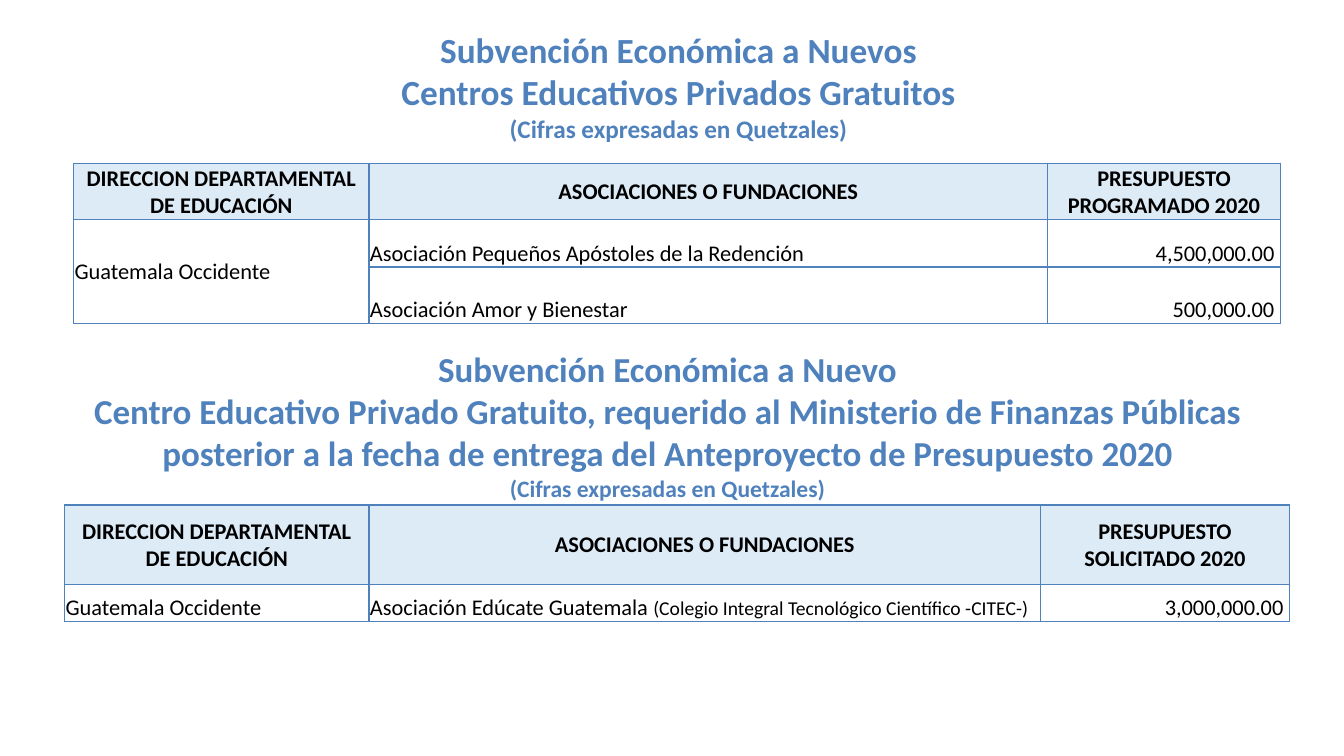
from lxml import etree
from pptx import Presentation
from pptx.dml.color import RGBColor
from pptx.enum.text import MSO_ANCHOR, PP_ALIGN
from pptx.oxml.ns import qn
from pptx.util import Inches, Pt

BLUE = RGBColor(0x4F, 0x81, 0xBD)
PALE_BLUE = RGBColor(0xDD, 0xEB, 0xF7)
BLACK = RGBColor(0, 0, 0)
LEFT, CENTER, RIGHT = PP_ALIGN.LEFT, PP_ALIGN.CENTER, PP_ALIGN.RIGHT
TOP, MIDDLE, BOTTOM = MSO_ANCHOR.TOP, MSO_ANCHOR.MIDDLE, MSO_ANCHOR.BOTTOM

DEPARTMENT_HEADER = "DIRECCION DEPARTAMENTAL\nDE EDUCACIÓN"
ASSOCIATION_HEADER = "ASOCIACIONES O FUNDACIONES"
DEPARTMENT = "Guatemala Occidente"
UNITS = "(Cifras expresadas en Quetzales)"


def write(frame, text, size=16, color=BLACK, bold=False, align=LEFT, font="Calibri"):
    """Fill the frame; text is a string or a list of (text, size) runs, with \\n between lines."""
    paragraph = frame.paragraphs[0]
    paragraph.alignment = align
    for part, part_size in [(text, size)] if isinstance(text, str) else text:
        for index, line in enumerate(part.split("\n")):
            if index:
                paragraph = frame.add_paragraph()
                paragraph.alignment = align
            if line:
                run = paragraph.add_run()
                run.text = line
                run.font.size, run.font.bold, run.font.name = Pt(part_size), bold, font
                run.font.color.rgb = color


class BudgetSlide:
    def __init__(self, slide):
        self.slide = slide

    def heading(self, left, top, width, height, text, inset_top=0):
        box = self.slide.shapes.add_textbox(*map(Inches, (left, top, width, height)))
        frame = box.text_frame
        frame.word_wrap = True
        frame.vertical_anchor = TOP
        frame.margin_top, frame.margin_bottom = Inches(inset_top), 0
        write(frame, text, color=BLUE, bold=True, align=CENTER)

    def border(self, cell, side, points):
        line = etree.SubElement(cell._tc.get_or_add_tcPr(), qn("a:" + side), w=str(Pt(points)))
        fill = etree.SubElement(line, qn("a:solidFill"))
        etree.SubElement(fill, qn("a:srgbClr"), val=str(BLUE))

    def cell(self, cell, text, header, align, anchor, right=0.01):
        cell.margin_left = cell.margin_top = Inches(0.01)
        cell.margin_right, cell.margin_bottom = Inches(right), 0
        cell.vertical_anchor = anchor
        for side in ("lnL", "lnR", "lnT", "lnB"):
            self.border(cell, side, 1)
        if header:
            cell.fill.solid()
            cell.fill.fore_color.rgb = PALE_BLUE
        else:
            cell.fill.background()
        write(cell.text_frame, text, bold=header, align=align)

    def table(self, left, top, widths, heights, rows):
        """Add a budget table; consecutive rows of one department share its cell."""
        frame = self.slide.shapes.add_table(
            len(rows), len(widths), Inches(left), Inches(top),
            Inches(sum(widths)), Inches(sum(heights)))
        table = frame.table
        table.first_row = table.horz_banding = False
        for column, width in zip(table.columns, widths):
            column.width = Inches(width)
        for row, height in zip(table.rows, heights):
            row.height = Inches(height)
        shared = len(rows) > 2
        if shared:
            table.cell(1, 0).merge(table.cell(len(rows) - 1, 0))
        for r, values in enumerate(rows):
            for c, value in enumerate(values):
                header, amount = r == 0, r > 0 and c == 2
                align = CENTER if header else RIGHT if amount else LEFT
                anchor = MIDDLE if header or (shared and c == 0) else BOTTOM
                self.cell(table.cell(r, c), value, header, align, anchor,
                          right=0.06 if amount else 0.01)


def main():
    deck = Presentation()
    deck.slide_width, deck.slide_height = Inches(13.33), Inches(7.5)
    budget = BudgetSlide(deck.slides.add_slide(deck.slide_layouts[6]))

    budget.heading(1.89, 0.08, 9.68, 1.4, [
        ("Subvención Económica a Nuevos\nCentros Educativos Privados Gratuitos", 25.2),
        ("\n" + UNITS, 18)], inset_top=0.2)
    budget.table(0.73, 1.62, (2.93, 6.73, 2.31), (0.56, 0.47, 0.56), [
        (DEPARTMENT_HEADER, ASSOCIATION_HEADER, "PRESUPUESTO\nPROGRAMADO 2020"),
        (DEPARTMENT, "Asociación Pequeños Apóstoles de la Redención", "4,500,000.00"),
        ("", "Asociación Amor y Bienestar", "500,000.00")])

    budget.heading(0.64, 3.45, 11.96, 1.55, [
        ("Subvención Económica a Nuevo\n"
         "Centro Educativo Privado Gratuito, requerido al Ministerio de Finanzas Públicas\n"
         "posterior a la fecha de entrega del Anteproyecto de Presupuesto 2020", 25),
        ("\n" + UNITS, 16.8)])
    budget.table(0.64, 5.01, (3.02, 6.66, 2.47), (0.79, 0.37), [
        (DEPARTMENT_HEADER, ASSOCIATION_HEADER, "PRESUPUESTO\nSOLICITADO 2020"),
        (DEPARTMENT,
         [("Asociación Edúcate Guatemala ", 16),
          ("(Colegio Integral Tecnológico Científico -CITEC-)", 14)],
         "3,000,000.00")])

    deck.save("out.pptx")


if __name__ == "__main__":
    main()
